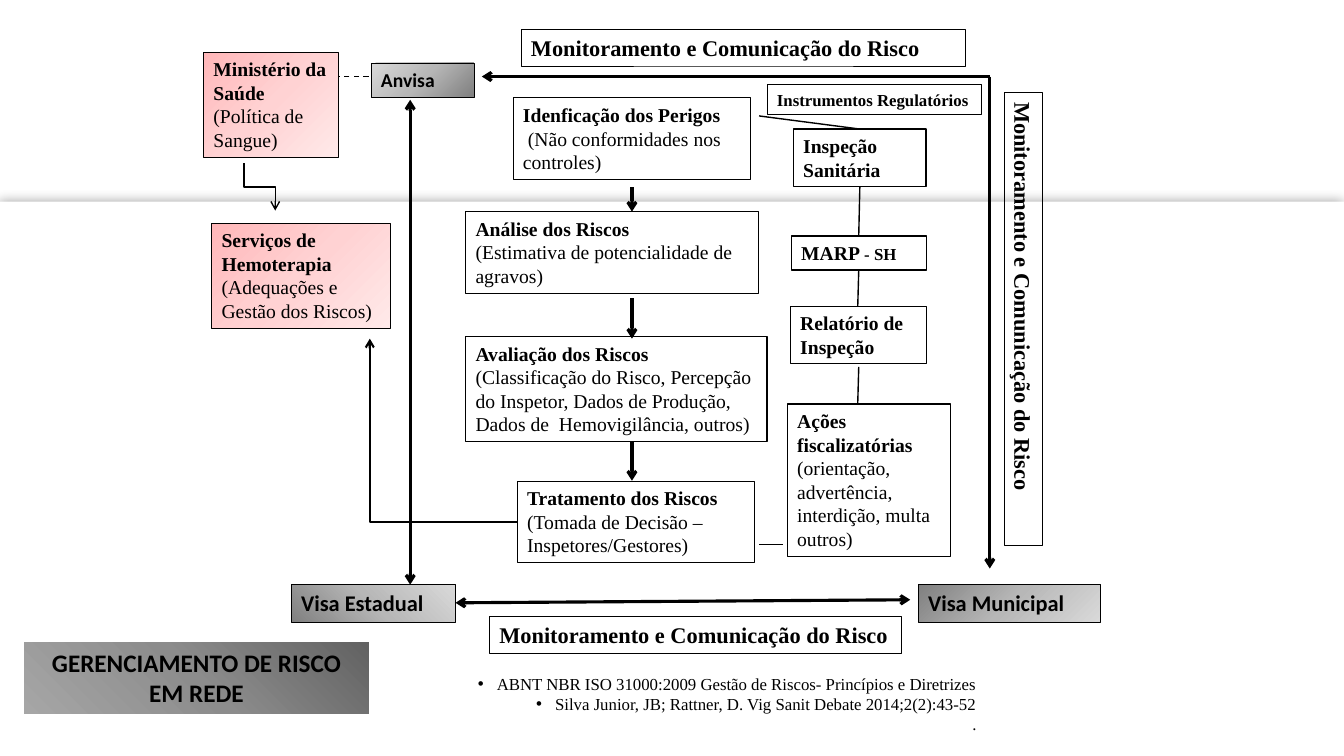
from lxml.etree import SubElement
from pptx import Presentation
from pptx.dml.color import RGBColor
from pptx.enum.dml import MSO_LINE
from pptx.enum.shapes import MSO_CONNECTOR, MSO_SHAPE
from pptx.enum.text import MSO_ANCHOR, MSO_AUTO_SIZE, PP_ALIGN
from pptx.oxml import parse_xml
from pptx.oxml.ns import nsdecls, qn
from pptx.util import Pt

SERIF, SANS = "Times New Roman", "Calibri"
PINKS = ["FFB7B9", "FFD2D3", "FFE9E9"]
GREYS = ["808080", "B7B7B7", "D9D9D9"]
DARK_GREYS = ["626262", "8C8C8C", "A6A6A6"]
MONITORING = "Monitoramento e Comunicação do Risco"


def color(hex_code):
    return RGBColor.from_string(hex_code)


def place(shape, left, top, width, height):
    shape.left, shape.top = Pt(left), Pt(top)
    shape.width, shape.height = Pt(width), Pt(height)
    shape.text_frame.word_wrap = True
    shape.text_frame.auto_size = MSO_AUTO_SIZE.NONE
    shape.text_frame.vertical_anchor = MSO_ANCHOR.TOP


prs = Presentation()
prs.slide_width, prs.slide_height = Pt(960), Pt(540)
slide = prs.slides.add_slide(prs.slide_layouts[1])
shapes = slide.shapes

# White lower panel with a soft shadow, behind everything
panel = shapes.add_shape(MSO_SHAPE.RECTANGLE, 0, Pt(144), Pt(960), Pt(396))
panel.fill.solid()
panel.fill.fore_color.rgb = color("FFFFFF")
panel.line.fill.background()
panel.shadow.inherit = False
panel_shadow = SubElement(panel.element.spPr.find(qn("a:effectLst")), qn("a:outerShdw"),
                          blurRad=str(Pt(8)), dist="0", dir="0", algn="ctr", rotWithShape="0")
SubElement(panel_shadow, qn("a:srgbClr"), val="A6A6A6")
shapes.element.insert(2, panel.element)

# Boxes: position, outline, font size, font, paragraphs ("|" ends the bold part)
boxes = {
    "hazards": (366.5, 70, 169.9, 58.3, 0.75, 14, SERIF,
                ["Idenficação dos Perigos", " |(Não conformidades nos controles)"]),
    "analysis": (332.6, 151.2, 209.5, 58.3, 0.75, 14, SERIF,
                 ["Análise dos Riscos", "|(Estimativa de potencialidade de agravos)"]),
    "evaluation": (332.6, 240.5, 215.3, 74.9, 0.75, 14, SERIF,
                   ["Avaliação dos Riscos", "|(Classificação do Risco, Percepção do Inspetor, "
                    "Dados de Produção, Dados de  Hemovigilância, outros)"]),
    "treatment": (369.4, 343.7, 169.9, 58.3, 0.75, 14, SERIF,
                  ["Tratamento dos Riscos", "|(Tomada de Decisão – Inspetores/Gestores)"]),
    "inspection": (566.6, 92.2, 95, 41, 1, 14, SERIF, ["Inspeção Sanitária"]),
    "marp": (565.2, 168.5, 96.5, 24.5, 1, 14, SERIF, ["MARP| - SH"]),
    "report": (564.5, 218.9, 97.2, 41, 1, 14, SERIF, ["Relatório de Inspeção"]),
    "actions": (562.3, 288.7, 116.6, 108.7, 1, 14, SERIF,
                ["Ações fiscalizatórias |(orientação, advertência, interdição, multa outros)"]),
    "services": (151.2, 159.4, 128, 74.9, 0.5, 14, SERIF,
                 ["Serviços de Hemoterapia |(Adequações e Gestão dos Riscos)"]),
    "ministry": (145.4, 37.4, 96.5, 74.9, 0.25, 14, SERIF,
                 ["Ministério da Saúde", "|(Política de Sangue)"]),
    "anvisa": (265, 45, 73.4, 24.5, 0.25, 14, SANS, ["Anvisa"]),
    "municipal": (655.9, 417.6, 130.3, 26.6, 0.25, 16, SANS, ["Visa Municipal"]),
    "state": (208.1, 417.6, 117.4, 26.6, 0.25, 16, SANS, ["Visa Estadual"]),
    "monitoring_bottom": (349.6, 439.9, 294.5, 26.6, 0.25, 16, SERIF, [MONITORING]),
    "monitoring_side": (569.2, 214.2, 323.3, 26.6, 0.25, 16, SERIF, [MONITORING]),
    "monitoring_top": (372.2, 20.6, 317.5, 26.6, 0.25, 16, SERIF, [MONITORING]),
    "instruments": (547.9, 60.5, 153.4, 21.6, 0.75, 12, SERIF, ["Instrumentos Regulatórios"]),
}
drawn = {}
for part, (left, top, width, height, outline, size, font, paragraphs) in boxes.items():
    box = drawn[part] = shapes.add_shape(MSO_SHAPE.RECTANGLE, 0, 0, 0, 0)
    place(box, left, top, width, height)
    box.fill.background()
    box.line.color.rgb = color("000000")
    box.line.width = Pt(outline)
    box.shadow.inherit = False
    for index, text in enumerate(paragraphs):
        frame = box.text_frame
        paragraph = frame.add_paragraph() if index else frame.paragraphs[0]
        paragraph.alignment = PP_ALIGN.LEFT
        for bold, words in zip((True, False), text.split("|")):
            if words:
                run = paragraph.add_run()
                run.text = words
                run.font.name, run.font.size, run.font.bold = font, Pt(size), bold
                run.font.color.rgb = color("000000")
drawn["monitoring_side"].rotation = 90
marp_suffix = drawn["marp"].text_frame.paragraphs[0].runs[1]
marp_suffix.font.bold, marp_suffix.font.size = True, Pt(12)

# Lines: start, end, width, arrowheads
STRAIGHT, ELBOW = MSO_CONNECTOR.STRAIGHT, MSO_CONNECTOR.ELBOW
HEAD, TAIL = ("headEnd",), ("tailEnd",)
lines = [
    (STRAIGHT, 451.4, 133.9, 451.4, 151.2, 2.25, TAIL),
    (STRAIGHT, 451.4, 213.1, 451.4, 241.9, 2.25, TAIL),
    (STRAIGHT, 451.4, 315.4, 451.4, 343.4, 2.25, TAIL),
    (STRAIGHT, 707, 54.7, 344.2, 54.7, 2.25, TAIL),
    (STRAIGHT, 707, 54.7, 707, 406.1, 2.25, TAIL),
    (STRAIGHT, 325.4, 430.6, 650.2, 428.4, 2.25, HEAD + TAIL),
    (STRAIGHT, 293, 71.3, 293, 417.6, 2.25, HEAD + TAIL),
    (STRAIGHT, 542.2, 82.8, 614.2, 92.2, 1, ()),
    (STRAIGHT, 613.4, 168.5, 614.2, 133.2, 1, ()),
    (STRAIGHT, 613.4, 193, 612.7, 218.9, 1, ()),
    (STRAIGHT, 613.4, 262.1, 612.7, 288, 1, ()),
    (STRAIGHT, 542.2, 388.8, 559.4, 388.8, 1, ()),
    (STRAIGHT, 263.5, 54.7, 241.9, 54.7, 1, ()),
    (ELBOW, 369.4, 373, 264.2, 241.9, 1.5, TAIL),
    (ELBOW, 202.3, 122.4, 168.5, 144.7, 1, TAIL),
]
connectors = []
for kind, x1, y1, x2, y2, width, arrowheads in lines:
    connector = shapes.add_connector(kind, Pt(x1), Pt(y1), Pt(x2), Pt(y2))
    connector.line.color.rgb = color("000000")
    connector.line.width = Pt(width)
    for end in arrowheads:
        SubElement(connector.line._get_or_add_ln(), qn("a:" + end), type="arrow")
    SubElement(connector.element.spPr, qn("a:effectLst"))
    connectors.append(connector)
ministry_to_anvisa, treatment_to_services, ministry_to_services = connectors[-3:]
ministry_to_anvisa.line.dash_style = MSO_LINE.DASH
treatment_to_services.element.spPr.find(qn("a:prstGeom")).set("prst", "bentConnector2")
ministry_to_services.element.spPr.find(qn("a:xfrm")).set("rot", str(270 * 60000))

# Title
title = shapes.title
place(title, 17.3, 458.6, 246.2, 51.1)
title.text_frame.text = "GERENCIAMENTO DE RISCO EM REDE"
heading = title.text_frame.paragraphs[0]
heading.alignment = PP_ALIGN.CENTER
heading.font.name, heading.font.size, heading.font.bold = SANS, Pt(18), True
heading.font.color.rgb = color("000000")
title.fill.background()

# References
references = slide.placeholders[1]
place(references, 69.8, 477.4, 635, 51.1)
references.text_frame.text = "\n".join([
    "ABNT NBR ISO 31000:2009 Gestão de Riscos- Princípios e Diretrizes",
    "Silva Junior, JB; Rattner, D. Vig Sanit Debate 2014;2(2):43-52",
    ".",
])
for reference in references.text_frame.paragraphs:
    properties = reference._p.get_or_add_pPr()
    properties.set("marL", str(Pt(13.5)))
    properties.set("indent", str(-Pt(13.5)))
    if reference.text == ".":
        SubElement(properties, qn("a:buNone"))
    else:
        SubElement(properties, qn("a:buChar"), char="•")
    reference.alignment = PP_ALIGN.RIGHT
    reference.space_before = Pt(0)
    reference.font.name, reference.font.size = SERIF, Pt(12)
    reference.font.color.rgb = color("000000")

# Gradients: an angle, or the left, top, right, bottom of a circular focus
gradients = [
    (drawn["services"], PINKS, 45),
    (drawn["ministry"], PINKS, (0, 0, 100, 100)),
    (drawn["anvisa"], GREYS, (100, 100, 0, 0)),
    (drawn["municipal"], GREYS, 45),
    (drawn["state"], GREYS, 315),
    (title, DARK_GREYS, (100, 0, 0, 100)),
]
for shape, shades, direction in gradients:
    gradient = parse_xml(f'<a:gradFill {nsdecls("a")} rotWithShape="1"><a:gsLst/></a:gradFill>')
    for index, shade in enumerate(shades):
        stop = SubElement(gradient[0], qn("a:gs"), pos=str(index * 50000))
        SubElement(stop, qn("a:srgbClr"), val=shade)
    if isinstance(direction, tuple):
        focus = {side: str(share * 1000) for side, share in zip("ltrb", direction)}
        circle = SubElement(gradient, qn("a:path"), path="circle")
        SubElement(circle, qn("a:fillToRect"), **focus)
    else:
        SubElement(gradient, qn("a:lin"), ang=str(direction * 60000), scaled="1")
    properties = shape.element.spPr
    properties.replace(properties.find(qn("a:noFill")), gradient)

prs.save("out.pptx")
